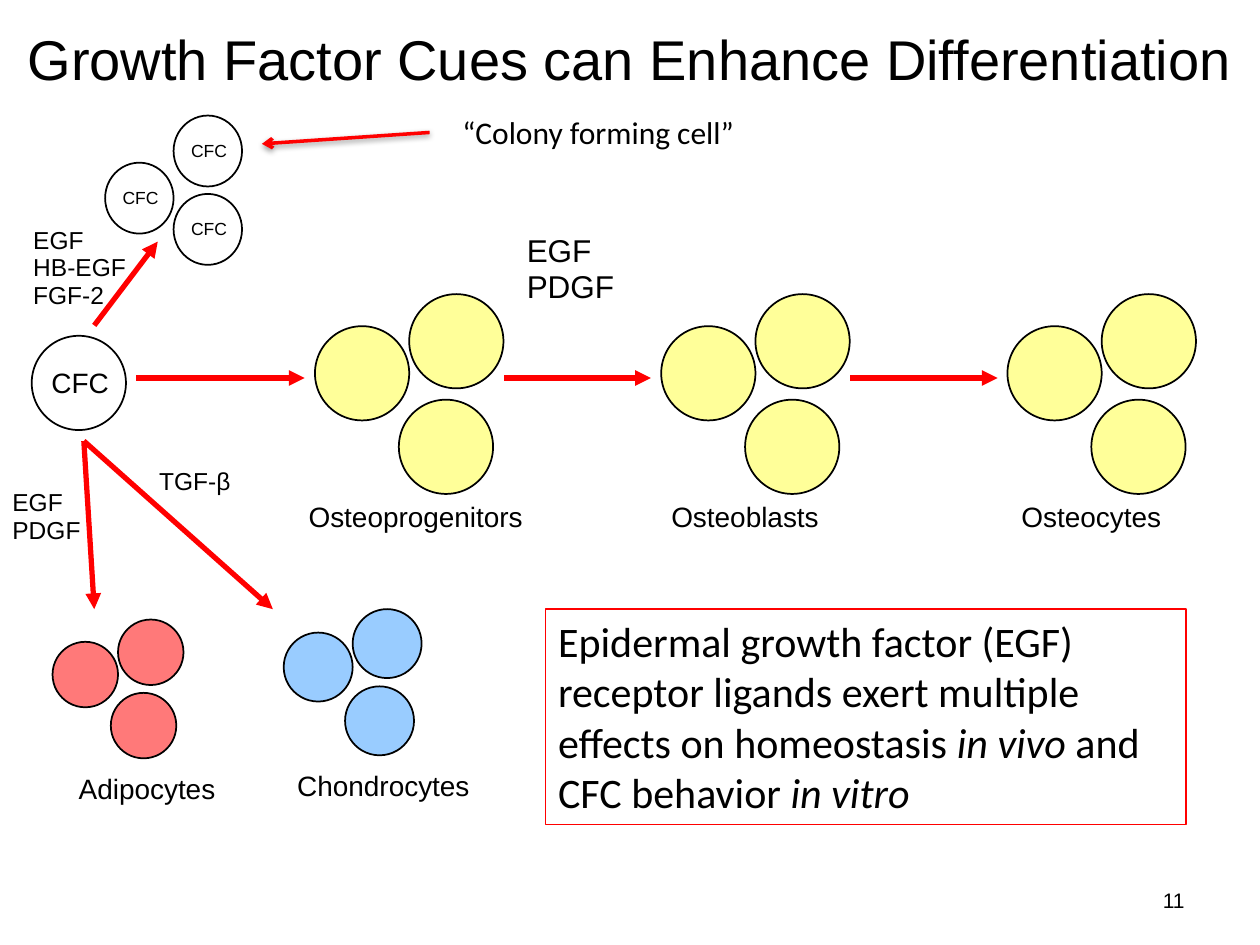
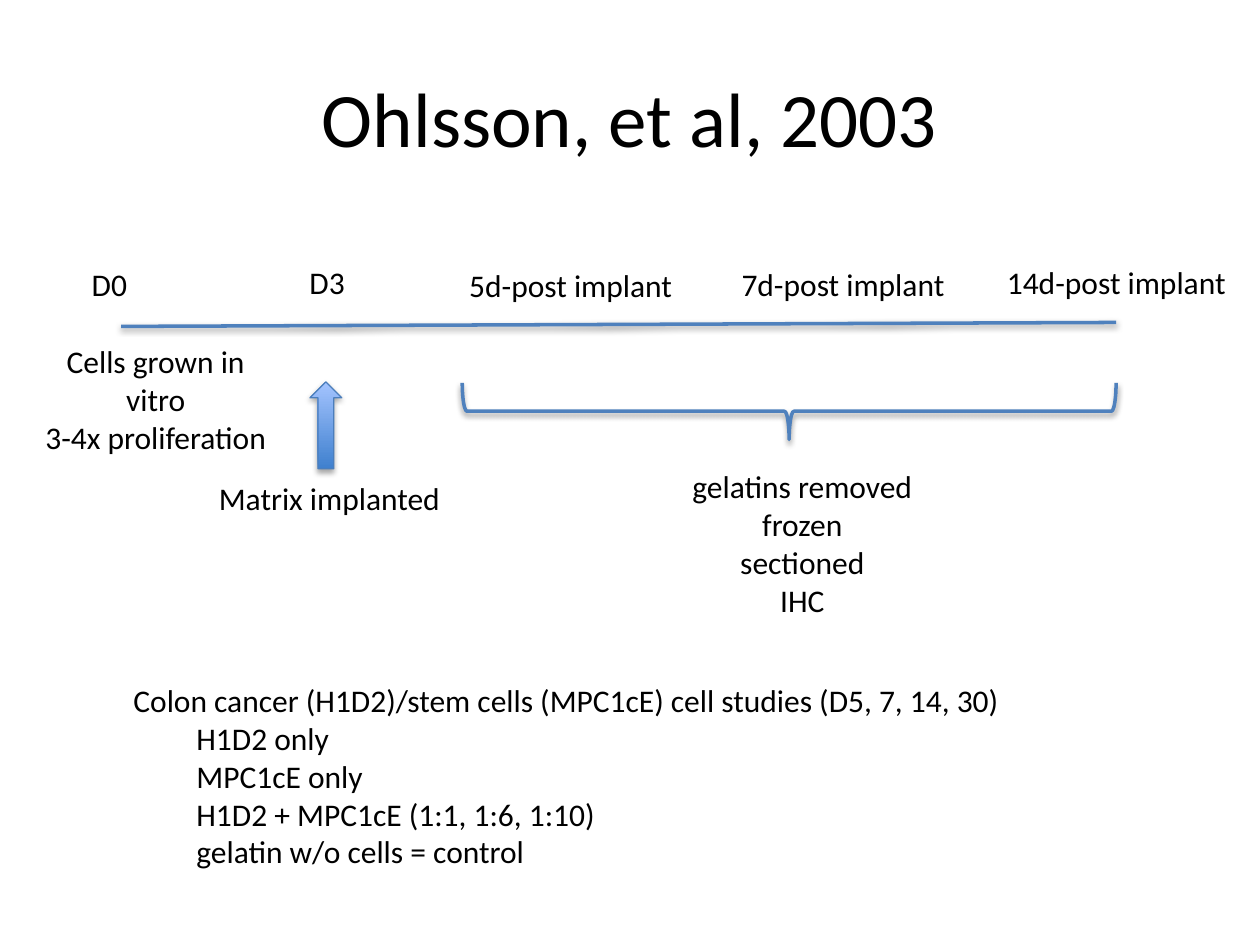
import pptx
import pptx.dml.color
import pptx.enum.shapes
import pptx.enum.text
import pptx.oxml
import pptx.oxml.ns
import pptx.util
from lxml import etree

Cm = pptx.util.Cm
Pt = pptx.util.Pt
SHAPES = pptx.enum.shapes.MSO_SHAPE
ALIGN = pptx.enum.text.PP_ALIGN
ANCHOR = pptx.enum.text.MSO_ANCHOR

BLACK, WHITE, RED = "000000", "FFFFFF", "FF0000"
YELLOW, SALMON, SKY = "FFFF99", "FF7979", "99CCFF"
BLUE, ARROW_EDGE = "4F81BD", "4B7EBC"
ARROW_GRADIENT = ("3F80CE", "A4C4FF")
SANS, BODY = "Arial", "Calibri"

# Places of the three cells of a cluster, in cell diameters
CLUSTER_OFFSETS = ((0.89, 1.12), (1, 0), (0, 0.34))


def rgb(hex_string):
    return pptx.dml.color.RGBColor.from_string(hex_string)


def add_xml(parent, tag, **attributes):
    return etree.SubElement(parent, pptx.oxml.ns.qn(tag), attributes)


def set_shadow(shape, opacity=0, distance=20000):
    """Give a soft shadow straight below, or none when opacity is 0."""
    effects = add_xml(shape._element.spPr, "a:effectLst")
    if opacity:
        shadow = add_xml(effects, "a:outerShdw", blurRad="40000", dist=str(distance),
                         dir="5400000", rotWithShape="0")
        color = add_xml(shadow, "a:srgbClr", val=BLACK)
        add_xml(color, "a:alpha", val=str(opacity * 1000))


def set_line(shape, color, width):
    shape.line.color.rgb = rgb(color)
    shape.line.width = Pt(width)


def format_text(text_frame, size, font, align):
    for paragraph in text_frame.paragraphs:
        paragraph.alignment = align
        for run in paragraph.runs:
            run.font.size = Pt(size)
            run.font.name = font
            run.font.color.rgb = rgb(BLACK)


def add_text(slide, box, text, size, font=BODY, align=ALIGN.LEFT,
             anchor=ANCHOR.TOP, wrap=True):
    text_frame = slide.shapes.add_textbox(*map(Cm, box)).text_frame
    text_frame.word_wrap = wrap
    text_frame.vertical_anchor = anchor
    text_frame.text = text
    format_text(text_frame, size, font, align)
    return text_frame


def add_title(slide, box, text, size, font):
    add_text(slide, box, text, size, font, ALIGN.CENTER, ANCHOR.MIDDLE)


def add_factors(slide, box, names, size):
    """List growth factors in tightly set lines."""
    text_frame = add_text(slide, box, "\n".join(names), size, SANS)
    for index, paragraph in enumerate(text_frame.paragraphs):
        paragraph.line_spacing = 0.5
        paragraph.space_before = Pt(size * 0.53 if index else 0)


def add_shape(slide, kind, box, line_color, line_width, fill=None):
    shape = slide.shapes.add_shape(kind, *map(Cm, box))
    if fill:
        shape.fill.solid()
        shape.fill.fore_color.rgb = rgb(fill)
    else:
        shape.fill.background()
    set_line(shape, line_color, line_width)
    return shape


def add_cell(slide, box, fill):
    shape = add_shape(slide, SHAPES.OVAL, box, BLACK, 1, fill)
    shape.shadow.inherit = False


def add_colony_cell(slide, box, size, label_height):
    left, top, width, height = box
    add_cell(slide, box, WHITE)
    label_top = top + (height - label_height) / 2
    add_text(slide, (left + 0.05, label_top, width - 0.05, label_height),
             "CFC", size, SANS, ALIGN.CENTER)


def add_cluster(slide, left, top, diameter, fill):
    for across, down in CLUSTER_OFFSETS:
        add_cell(slide, (left + across * diameter, top + down * diameter,
                         diameter, diameter), fill)


def add_line(slide, start, end, color, width, tail=None, shadow=0):
    line = slide.shapes.add_connector(pptx.enum.shapes.MSO_CONNECTOR.STRAIGHT,
                                      *map(Cm, start + end))
    set_line(line, color, width)
    if tail:
        add_xml(line.line._get_or_add_ln(), "a:tailEnd", type=tail)
    set_shadow(line, shadow)


def add_summary(slide):
    box = add_shape(slide, SHAPES.RECTANGLE, (11, 12.28, 12.91, 4.34), RED, 0.75)
    box.shadow.inherit = False
    box.text_frame.word_wrap = True
    box.text_frame.vertical_anchor = ANCHOR.TOP
    paragraph = box.text_frame.paragraphs[0]
    pieces = (
        ("Epidermal growth factor (EGF) receptor ligands exert multiple "
         "effects on homeostasis ", False),
        ("in vivo ", True),
        ("and CFC behavior ", False),
        ("in vitro", True),
    )
    for text, italic in pieces:
        run = paragraph.add_run()
        run.text = text
        run.font.italic = italic
    format_text(box.text_frame, 24, BODY, ALIGN.LEFT)


def build_differentiation(slide):
    add_text(slide, (18.2, 17.65, 5.93, 1.01), "11", 12, SANS, ALIGN.RIGHT, ANCHOR.MIDDLE)
    add_title(slide, (0, 0, 25.4, 2.33),
              "Growth Factor Cues can Enhance Differentiation", 32, SANS)

    add_colony_cell(slide, (0.64, 6.77, 1.9, 1.9), 16, 0.94)
    for left, top in ((2.12, 3.28), (3.5, 2.33), (3.5, 3.91)):
        add_colony_cell(slide, (left, top, 1.38, 1.43), 10, 0.69)

    bone_stages = (("Osteoprogenitors", ALIGN.RIGHT), ("Osteoblasts", ALIGN.CENTER),
                   ("Osteocytes", ALIGN.CENTER))
    for index, (name, align) in enumerate(bone_stages):
        left = 6.35 + 6.98 * index
        add_cluster(slide, left, 5.93, 1.9, YELLOW)
        add_text(slide, (left - 1.06, 9.95, 5.5, 0.94), name, 16, SANS, align)

    add_cluster(slide, 1.06, 12.49, 1.32, SALMON)
    add_text(slide, (1.06, 15.42, 3.81, 0.94), "Adipocytes", 16, SANS, ALIGN.CENTER)
    add_cluster(slide, 5.72, 12.28, 1.39, SKY)
    add_text(slide, (5.72, 15.37, 4.02, 0.94), "Chondrocytes", 16, SANS, ALIGN.CENTER)

    add_factors(slide, (0.42, 4.66, 4.23, 1.8), ("EGF", "HB-EGF", "FGF-2"), 14)
    add_factors(slide, (10.37, 4.87, 4.23, 1.47), ("EGF", "PDGF"), 18)
    add_factors(slide, (2.96, 9.53, 4.23, 0.61), ("TGF-β",), 14)
    add_factors(slide, (0, 9.95, 4.23, 1.19), ("EGF", "PDGF"), 14)

    paths = (
        ((1.9, 6.56), (3.18, 4.87)),
        ((1.69, 8.89), (1.9, 12.28)),
        ((1.69, 8.89), (5.5, 12.28)),
        ((2.75, 7.62), (6.14, 7.62)),
        ((10.16, 7.62), (13.12, 7.62)),
        ((17.14, 7.62), (20.11, 7.62)),
    )
    for start, end in paths:
        add_line(slide, start, end, RED, 3, "triangle")

    add_summary(slide)
    add_line(slide, (8.66, 2.67), (5.28, 2.9), RED, 2, "arrow", shadow=38)
    add_text(slide, (9.07, 2.16, 6.07, 1.02), "“Colony forming cell”", 18, wrap=False)


def add_implant_arrow(slide):
    arrow = add_shape(slide, SHAPES.UP_ARROW, (6.25, 7.7, 0.64, 1.75), ARROW_EDGE, 0.75)
    arrow.fill.gradient()
    arrow.fill.gradient_angle = 90
    for stop, color in zip(arrow.fill.gradient_stops, ARROW_GRADIENT):
        stop.color.rgb = rgb(color)
    set_shadow(arrow, 35, 23000)


def build_timeline(slide):
    add_title(slide, (1.27, 0.76, 22.86, 3.18), "Ohlsson, et al, 2003", 44, BODY)
    add_line(slide, (2.44, 6.58), (22.5, 6.5), BLUE, 2, shadow=38)

    time_points = (
        (1.6, 5.21, 2.03, "D0", ALIGN.LEFT),
        (5.99, 5.18, 2.03, "D3", ALIGN.LEFT),
        (8.76, 5.23, 5.49, "5d-post implant", ALIGN.CENTER),
        (14.25, 5.21, 5.49, "7d-post implant", ALIGN.CENTER),
        (19.76, 5.18, 5.49, "14d-post implant", ALIGN.CENTER),
    )
    for left, top, width, text, align in time_points:
        add_text(slide, (left, top, width, 1.02), text, 18, align=align)

    steps = (
        ((0.46, 6.78, 5.36, 2.57), "Cells grown in vitro\n3-4x proliferation"),
        ((3.96, 9.53, 5.36, 1.02), "Matrix implanted"),
        ((10.36, 9.3, 11.63, 3.33), "gelatins removed\nfrozen\nsectioned\nIHC"),
    )
    for box, text in steps:
        add_text(slide, box, text, 18, align=ALIGN.CENTER)

    add_implant_arrow(slide)
    brace = add_shape(slide, SHAPES.LEFT_BRACE, (15.34, 1.7, 1.14, 13.18), BLUE, 2)
    brace.rotation = 270
    set_shadow(brace, 38)

    studies = add_text(
        slide, (2.44, 13.61, 21.69, 4.11),
        "Colon cancer (H1D2)/stem cells (MPC1cE) cell studies (D5, 7, 14, 30)\n"
        "H1D2 only\nMPC1cE only\nH1D2 + MPC1cE (1:1, 1:6, 1:10)\n"
        "gelatin w/o cells = control", 18)
    for paragraph in studies.paragraphs[1:]:
        paragraph._p.get_or_add_pPr().set("marL", str(Cm(1.27)))


def main():
    presentation = pptx.Presentation()
    presentation.slide_width = Cm(25.4)
    presentation.slide_height = Cm(19.05)
    blank = presentation.slide_layouts[6]
    for build in (build_differentiation, build_timeline):
        build(presentation.slides.add_slide(blank))
    presentation.save("out.pptx")


if __name__ == "__main__":
    main()
